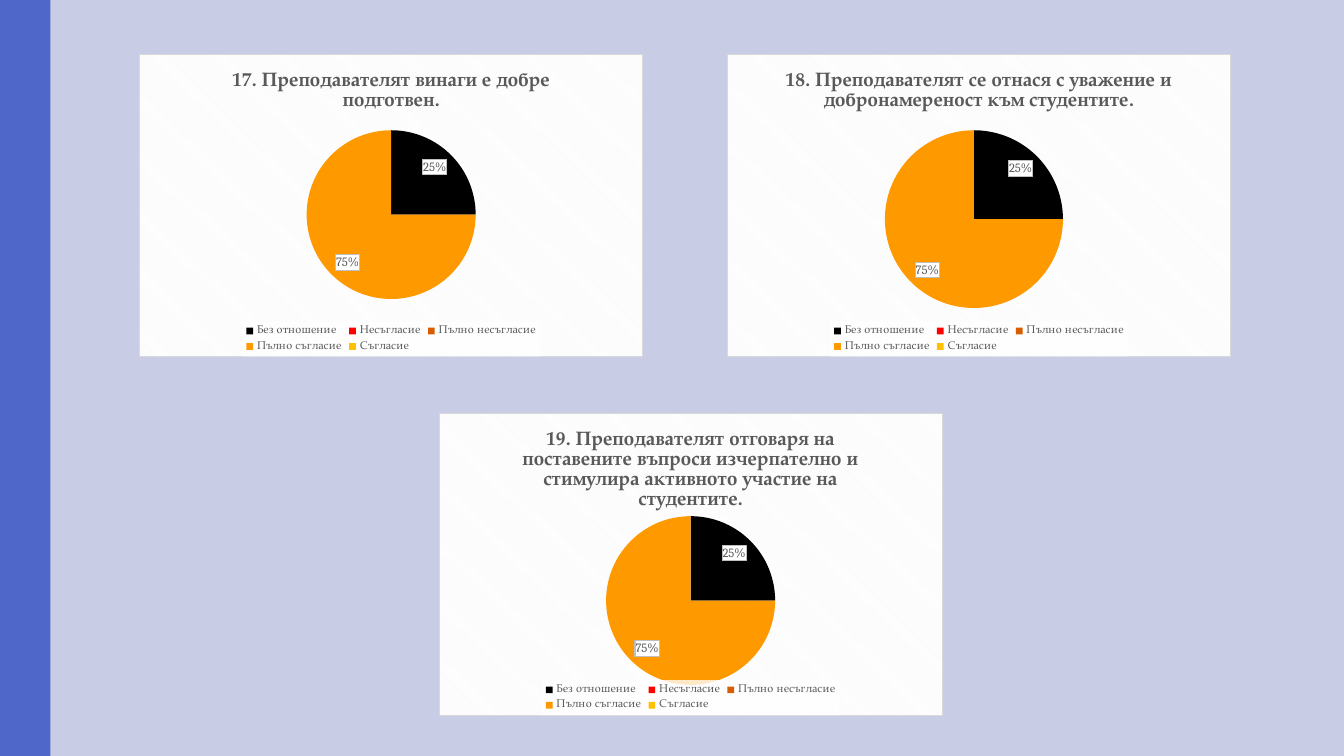
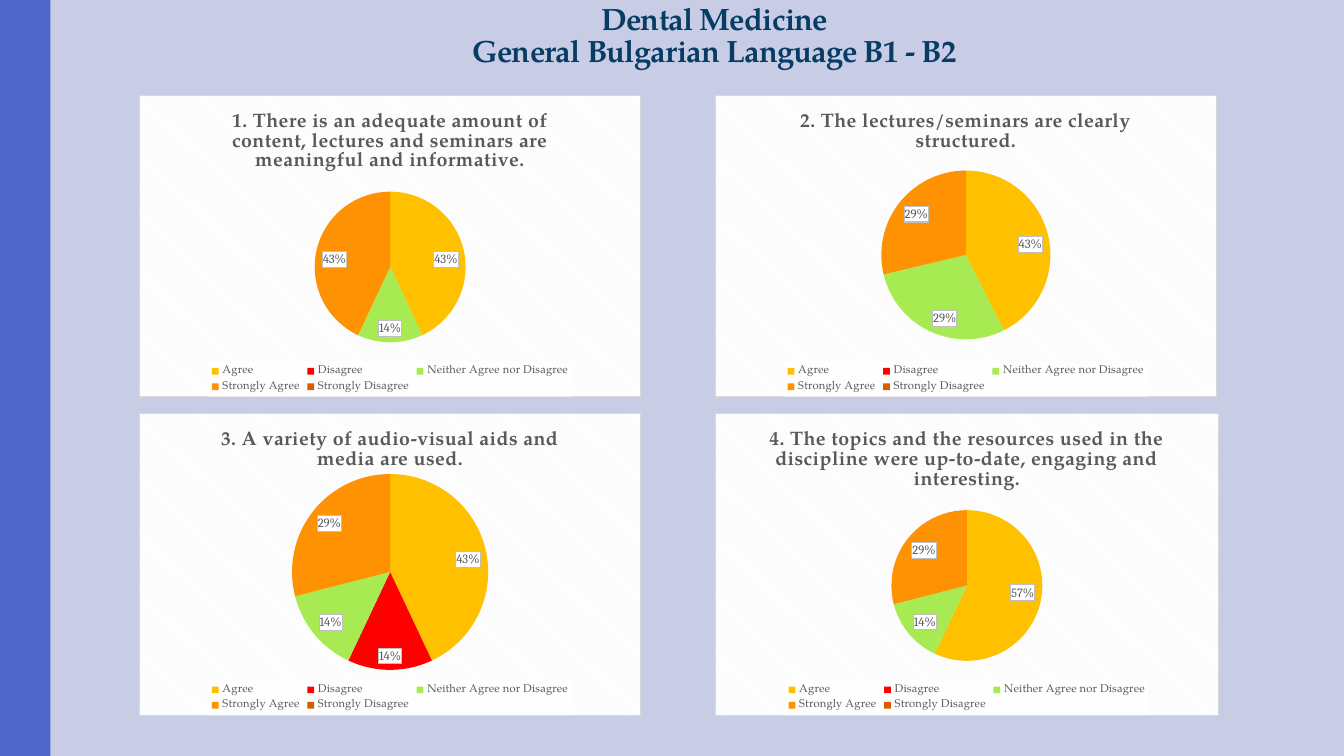
from pptx import Presentation
from pptx.chart.data import CategoryChartData
from pptx.dml.color import RGBColor
from pptx.enum import chart as charts, shapes, text
from pptx.oxml import parse_xml
from pptx.oxml.ns import nsdecls, qn
from pptx.util import Inches, Pt

SERIF = "TeX Gyre Pagella"
BACKGROUND, BAND, HEADING, GREY = "C8CDE5", "4E67C8", "073C65", "595959"
CHART_HEIGHT = 3
TITLE_FONT = {"name": SERIF, "size": Pt(14), "bold": True}
LEGEND_FONT = {"name": SERIF, "size": Pt(8)}
LABEL_FONT = {"name": "Cambria", "size": Pt(9)}

PANEL_STYLE = (
    '<a:pattFill prst="dkDnDiag"><a:fgClr><a:srgbClr val="F2F2F2"/></a:fgClr>'
    '<a:bgClr><a:srgbClr val="FFFFFF"/></a:bgClr></a:pattFill>'
    '<a:ln w="9525"><a:solidFill><a:srgbClr val="D9D9D9"/></a:solidFill></a:ln>')
LEGEND_STYLE = ('<a:solidFill><a:srgbClr val="FFFFFF"><a:alpha val="78000"/>'
                '</a:srgbClr></a:solidFill>')
LABEL_STYLE = ('<a:solidFill><a:srgbClr val="FFFFFF"/></a:solidFill>'
               '<a:ln w="9525"><a:solidFill><a:srgbClr val="BFBFBF"/></a:solidFill></a:ln>')

# Plot areas as left, top, width and height, in shares of the chart
SHORT_TITLE = (0, 0.25, 1, 0.56)
LONG_TITLE = (0, 0.32, 1, 0.5)

SLIDES = [
    {"heading": None, "spacing": 0,
     "answers": {"Без отношение": "000000", "Несъгласие": "FF0000",
                 "Пълно несъгласие": "D85C00", "Пълно съгласие": "FF9900",
                 "Съгласие": "FFC000"},
     "charts": [
         ("17. Преподавателят винаги е добре подготвен.",
          (1.38, 0.54, 5), SHORT_TITLE, (25, 0, 0, 75, 0)),
         ("18. Преподавателят се отнася с уважение и добронамереност към студентите.",
          (7.21, 0.54, 5), (0.02, 0.25, 0.94, 0.59), (25, 0, 0, 75, 0)),
         ("19. Преподавателят отговаря на поставените въпроси изчерпателно "
          "и стимулира активното участие на студентите.",
          (4.35, 4.1, 5), (0, 0.34, 1, 0.56), (25, 0, 0, 75, 0)),
     ]},
    {"heading": ("Dental Medicine", "General Bulgarian Language B1 - B2"), "spacing": 20,
     "answers": {"Agree": "FFC000", "Disagree": "FF0000",
                 "Neither Agree nor Disagree": "A7EA52", "Strongly Agree": "FE9202",
                 "Strongly Disagree": "D85C00"},
     "charts": [
         ("1. There is an adequate amount of content, lectures and seminars "
          "are meaningful and informative.",
          (1.38, 0.94, 4.98), LONG_TITLE, (43, 0, 14, 43, 0)),
         ("2. The lectures/seminars are clearly structured.",
          (7.09, 0.94, 4.98), SHORT_TITLE, (43, 0, 29, 29, 0)),
         ("3. A variety of audio-visual aids and media are used.",
          (1.38, 4.1, 4.98), (0.03, 0.2, 0.94, 0.65), (43, 14, 14, 29, 0)),
         ("4. The topics and the resources used in the discipline were "
          "up-to-date, engaging and interesting.",
          (7.09, 4.1, 5), LONG_TITLE, (57, 0, 14, 29, 0)),
     ]},
]


def paint(target, color):
    """Give a fill or a font one solid colour."""
    if hasattr(target, "solid"):
        target.solid()
        target.fore_color.rgb = RGBColor.from_string(color)
    else:
        target.color.rgb = RGBColor.from_string(color)


def style_before_text(parent, style):
    """Put shape properties ahead of the text properties of a chart part."""
    parent.find(qn("c:txPr")).addprevious(
        parse_xml(f'<c:spPr {nsdecls("c", "a")}>{style}</c:spPr>'))


deck = Presentation()
deck.slide_width, deck.slide_height = Inches(13.33), Inches(7.5)
paint(deck.slide_master.background.fill, BACKGROUND)

for content in SLIDES:
    page = deck.slides.add_slide(deck.slide_layouts[6])
    band = page.shapes.add_shape(shapes.MSO_SHAPE.RECTANGLE, 0, 0, Inches(0.5), deck.slide_height)
    band.shadow.inherit = False
    paint(band.fill, BAND)
    band.line.fill.background()

    if content["heading"]:
        box = page.shapes.add_textbox(Inches(3.21), 0, Inches(7.76), Inches(0.73))
        paint(box.fill, BACKGROUND)
        box.text_frame.word_wrap = True
        box.text_frame.vertical_anchor = text.MSO_ANCHOR.BOTTOM
        para = box.text_frame.paragraphs[0]
        para.alignment, para.line_spacing = text.PP_ALIGN.CENTER, 0.85
        for number, line in enumerate(content["heading"]):
            if number:
                para.add_line_break()
            span = para.add_run()
            span.text = line
            for key, value in {"name": SERIF, "size": Pt(22), "bold": True}.items():
                setattr(span.font, key, value)
            paint(span.font, HEADING)
            span.font._element.set("spc", "-50")

    for question, (left, top, width), plot_area, values in content["charts"]:
        data = CategoryChartData()
        data.categories = list(content["answers"])
        data.add_series("Series 1", values)
        chart = page.shapes.add_chart(
            charts.XL_CHART_TYPE.PIE, Inches(left), Inches(top),
            Inches(width), Inches(CHART_HEIGHT), data).chart
        chart.font.name, chart.font.size = "Cambria", Pt(10)
        paint(chart.font, "FFFFFF")
        style_before_text(chart._chartSpace, PANEL_STYLE)

        chart.has_title = True
        chart.chart_title.include_in_layout = False
        para = chart.chart_title.text_frame.paragraphs[0]
        para.line_spacing = 0.85
        span = para.add_run()
        span.text = question
        span.font._element.set("spc", str(content["spacing"]))

        chart.has_legend = True
        legend = chart.legend
        legend.position = charts.XL_LEGEND_POSITION.BOTTOM
        legend.include_in_layout = False

        pie = chart.plots[0]
        pie.vary_by_categories = True
        series = pie.series[0]
        labels = series.data_labels
        labels.show_value, labels.show_percentage = False, True
        labels.number_format, labels.number_format_is_linked = "0%", False
        labels.position = charts.XL_LABEL_POSITION.INSIDE_END

        for font, format_values in ((span.font, TITLE_FONT), (legend.font, LEGEND_FONT),
                                    (labels.font, LABEL_FONT)):
            for key, value in format_values.items():
                setattr(font, key, value)
            paint(font, GREY)
        style_before_text(legend._element, LEGEND_STYLE)
        style_before_text(labels._element, LABEL_STYLE)

        hidden = 0
        for index, (color, value) in enumerate(zip(content["answers"].values(), values)):
            paint(series.points[index].format.fill, color)
            if value == 0:
                labels._element.insert(hidden, parse_xml(
                    f'<c:dLbl {nsdecls("c")}><c:idx val="{index}"/><c:delete val="1"/></c:dLbl>'))
                hidden += 1

        plot = chart._chartSpace.chart.plotArea
        for layout in plot.findall(qn("c:layout")):
            plot.remove(layout)
        sizes = "".join(f'<c:{key} val="{share}"/>' for key, share in zip("xywh", plot_area))
        plot.insert(0, parse_xml(
            f'<c:layout {nsdecls("c")}><c:manualLayout><c:layoutTarget val="inner"/>'
            f'<c:xMode val="edge"/><c:yMode val="edge"/>{sizes}</c:manualLayout></c:layout>'))

deck.save("out.pptx")
